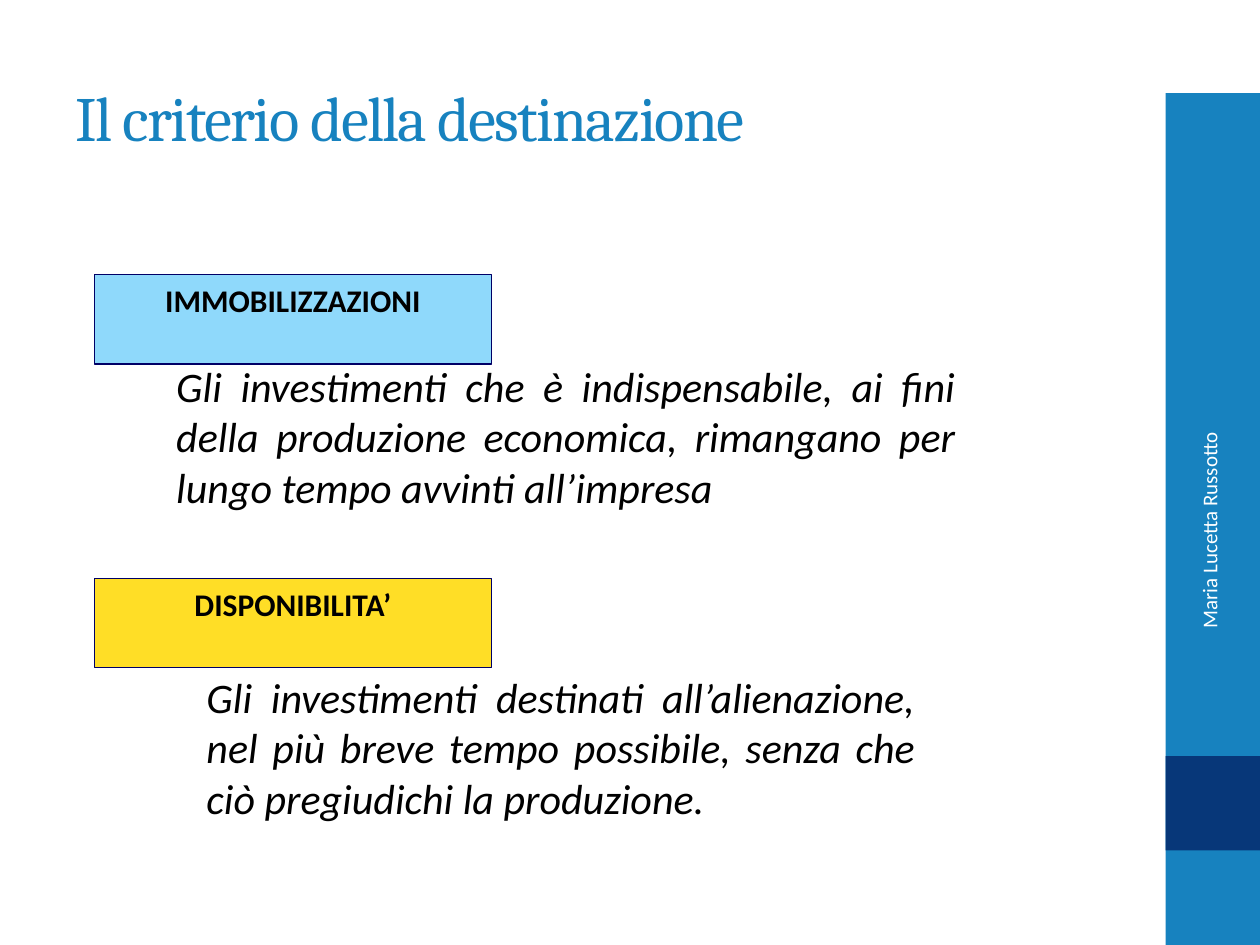
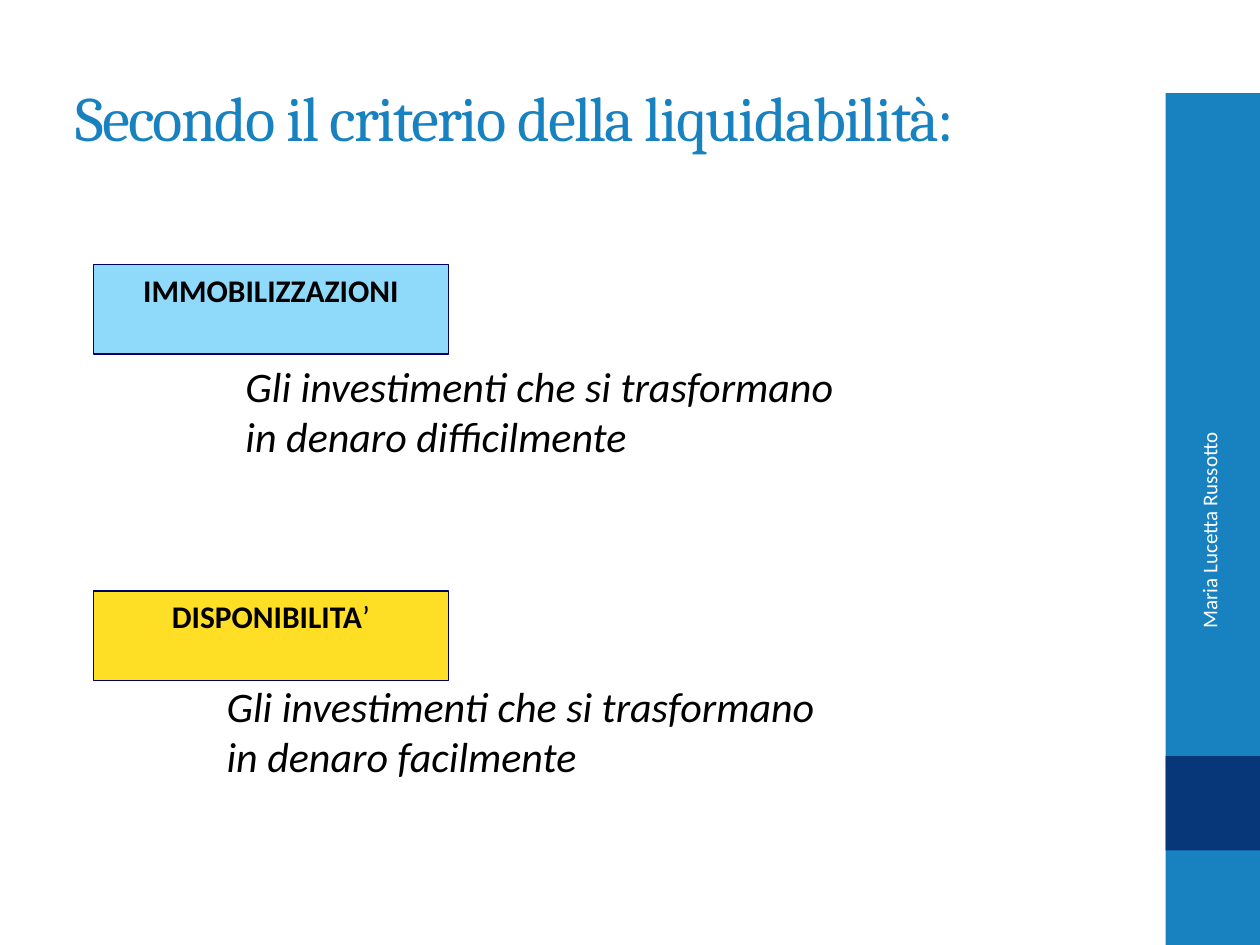
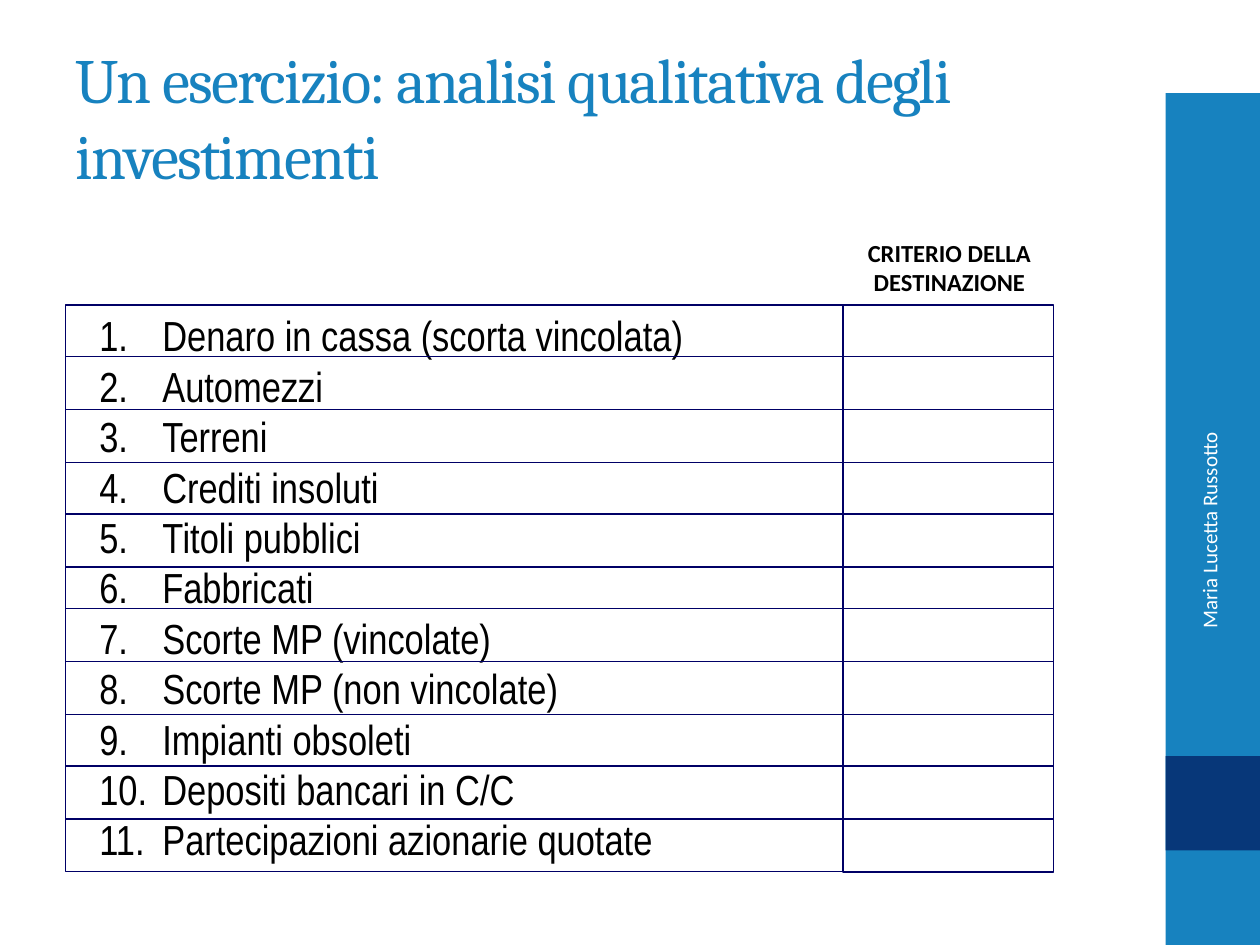
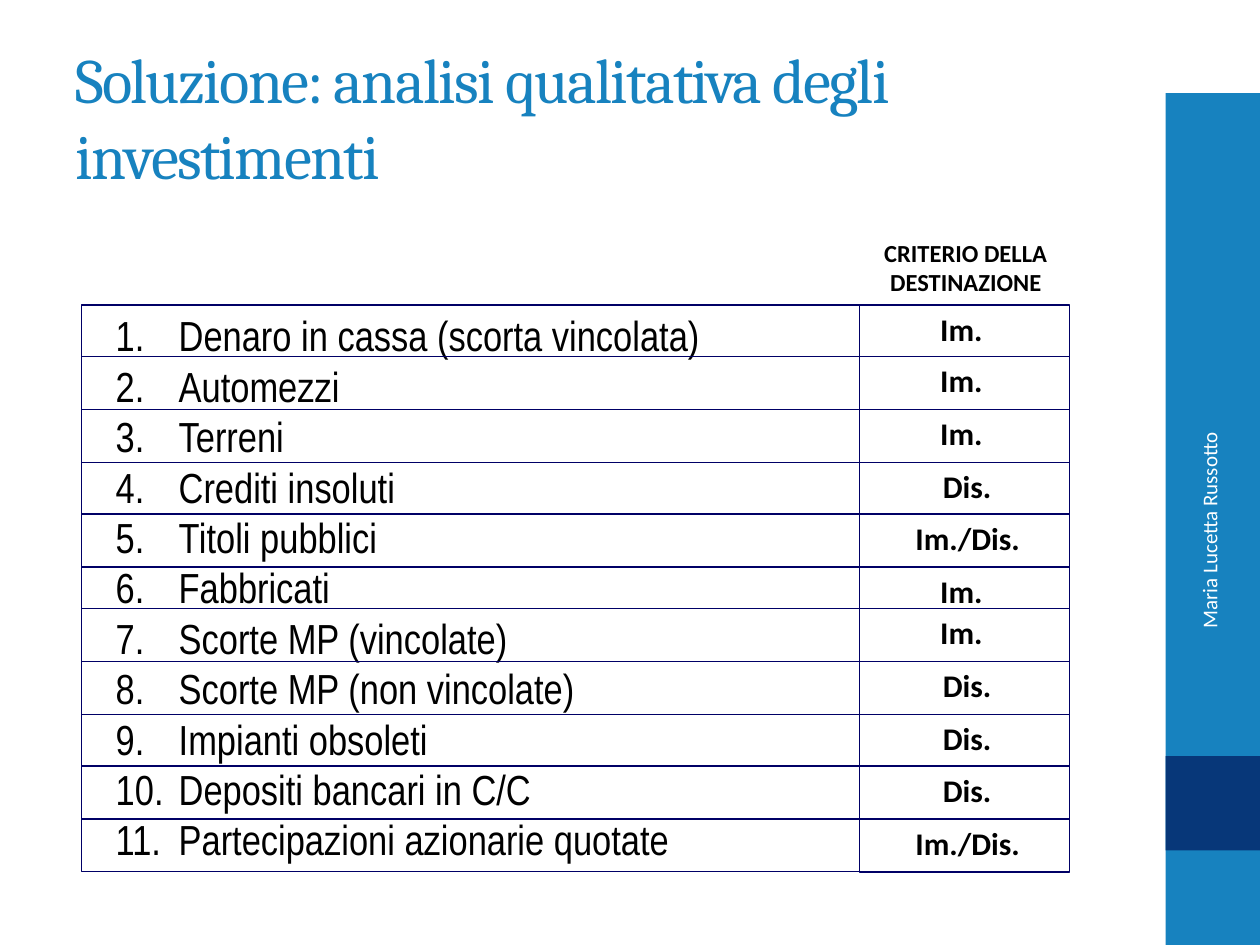
from itertools import accumulate

from lxml.etree import SubElement
from pptx import Presentation
from pptx.dml.color import RGBColor
from pptx.enum.shapes import MSO_CONNECTOR as Connector, MSO_SHAPE as Preset
from pptx.enum.text import MSO_ANCHOR as Anchor, MSO_AUTO_SIZE as AutoSize, PP_ALIGN as Align
from pptx.oxml.ns import qn
from pptx.util import Emu, Pt

SCALE = 9144
BLUE, NAVY, SKY, YELLOW = "1782BF", "073779", "8FD9FB", "FFDE26"
INK, BLACK, WHITE = "000066", "000000", "FFFFFF"
BODY, HEADING, NARROW = "Calibri", "Cambria", "Arial Narrow"

ROW_EDGES = [round(sixths / 6) for sixths in accumulate([1450] + [250] * 5 + [200] + [250] * 5)]
ITEMS_WIDTH, ANSWER_WIDTH = 617, 167
ITEMS = [
    "Denaro in cassa (scorta vincolata)",
    "Automezzi",
    "Terreni",
    "Crediti insoluti",
    "Titoli pubblici",
    "Fabbricati",
    "Scorte MP (vincolate)",
    "Scorte MP (non vincolate)",
    "Impianti obsoleti",
    "Depositi bancari in C/C",
    "Partecipazioni azionarie quotate",
]
FIXED, AVAILABLE, EITHER = "Im.", "Dis.", "Im./Dis."
ANSWERS = [FIXED, FIXED, FIXED, AVAILABLE, EITHER, FIXED, FIXED,
           AVAILABLE, AVAILABLE, AVAILABLE, EITHER]
ANSWER_SPANS = {FIXED: (671, 54), AVAILABLE: (673, 59), EITHER: (651, 104)}


def px(*lengths):
    return [Emu(length * SCALE) for length in lengths]


def color(hex_code):
    return RGBColor.from_string(hex_code)


def add_run(paragraph, words, size, font=BODY, ink=BLACK, bold=False, italic=False):
    run = paragraph.add_run()
    run.text = words
    run.font.size = Pt(size)
    run.font.name = font
    run.font.color.rgb = color(ink)
    run.font.bold = bold
    run.font.italic = italic
    return run


def add_text(slide, box, lines, size, align=Align.LEFT, wrap=True, anchor=Anchor.TOP, **style):
    text = slide.shapes.add_textbox(*px(*box))
    frame = text.text_frame
    frame.word_wrap = wrap
    frame.vertical_anchor = anchor
    if not wrap:
        frame.auto_size = AutoSize.SHAPE_TO_FIT_TEXT
    for index, words in enumerate(lines):
        paragraph = frame.add_paragraph() if index else frame.paragraphs[0]
        paragraph.alignment = align
        add_run(paragraph, words, size, **style)
    return text


def add_rect(slide, box, fill=None, outline=None):
    rect = slide.shapes.add_shape(Preset.RECTANGLE, *px(*box))
    rect.shadow.inherit = False
    if fill:
        rect.fill.solid()
        rect.fill.fore_color.rgb = color(fill)
    else:
        rect.fill.background()
    if outline:
        rect.line.color.rgb = color(outline)
        rect.line.width = Pt(0.75)
    else:
        rect.line.fill.background()
    return rect


def add_rule(slide, left, right, y):
    rule = slide.shapes.add_connector(Connector.STRAIGHT, *px(left, y, right, y))
    rule.line.color.rgb = color(INK)
    rule.line.width = Pt(0.75)
    SubElement(rule._element.spPr, qn("a:effectLst"))


def add_label(slide, box, fill, runs):
    label = add_rect(slide, box, fill, INK)
    frame = label.text_frame
    frame.vertical_anchor = Anchor.TOP
    paragraph = frame.paragraphs[0]
    paragraph.alignment = Align.CENTER
    for words, bold in runs:
        add_run(paragraph, words, 18, bold=bold)


def add_definition(slide, box, words, align):
    definition = add_text(slide, box, [words], 24, align, italic=True)
    definition.text_frame.margin_top = px(45)[0]


def number_paragraphs(frame):
    for paragraph in frame.paragraphs:
        properties = paragraph._p.get_or_add_pPr()
        indent = px(50)[0]
        properties.set("marL", str(indent))
        properties.set("indent", str(-indent))
        SubElement(properties, qn("a:buFont"), typeface="+mj-lt")
        SubElement(properties, qn("a:buAutoNum"), type="arabicPeriod")


def add_base_slide(deck, title):
    slide = deck.slides.add_slide(deck.slide_layouts[6])
    add_rect(slide, (925, 74, 75, 676), BLUE)
    add_rect(slide, (925, 600, 75, 75), NAVY)
    heading = add_text(slide, (50, 30, 833, 125), [title], 36, anchor=Anchor.MIDDLE,
                       font=HEADING, ink=BLUE)
    title_run = heading.text_frame.paragraphs[0].runs[0]
    title_run.font._element.set("spc", "-100")
    author = add_text(slide, (830, 443, 259, 40), ["Maria Lucetta Russotto"], 12,
                      Align.RIGHT, anchor=Anchor.MIDDLE, ink=WHITE)
    author.rotation = 270
    return slide


def add_criterion_slide(deck, title, entries, align):
    slide = add_base_slide(deck, title)
    for label_box, fill, runs, definition_box, words in entries:
        add_definition(slide, definition_box, words, align)
        add_label(slide, label_box, fill, runs)


def add_exercise_slide(deck, title, left, answers=()):
    slide = add_base_slide(deck, title)
    divider = left + ITEMS_WIDTH
    top, bottom = ROW_EDGES[0], ROW_EDGES[-1]
    items = add_text(slide, (left + 17, 241, 487, 454), ITEMS, 24, wrap=False, font=NARROW)
    number_paragraphs(items.text_frame)
    add_rect(slide, (left, top, ITEMS_WIDTH, bottom - top), outline=INK)
    for row_top, row_bottom in zip(ROW_EDGES, ROW_EDGES[1:]):
        add_rect(slide, (divider, row_top, ANSWER_WIDTH, row_bottom - row_top), outline=INK)
    for edge in ROW_EDGES[1:-1]:
        add_rule(slide, left, divider, edge)
    add_text(slide, (divider + 7, 184, 155, 57), ["CRITERIO DELLA", "DESTINAZIONE"], 14,
             Align.CENTER, wrap=False, bold=True)
    for row_top, answer in zip(ROW_EDGES, answers):
        offset, width = ANSWER_SPANS[answer]
        add_text(slide, (left + offset, row_top - 1, width, 40), [answer], 18,
                 Align.CENTER, wrap=False, bold=True)


def main():
    deck = Presentation()
    deck.slide_width, deck.slide_height = px(1000, 750)
    add_criterion_slide(deck, "Il criterio della destinazione", [
        ((75, 218, 315, 71), SKY, [("IMMOBILIZZAZIONI", True)], (130, 241, 638, 172),
         "Gli investimenti che è indispensabile, ai fini della produzione economica, "
         "rimangano per lungo tempo avvinti all’impresa"),
        ((75, 459, 315, 71), YELLOW, [("DISPONIBILITA’", True)], (154, 488, 582, 172),
         "Gli investimenti destinati all’alienazione, nel più breve tempo possibile, "
         "senza che ciò pregiudichi la produzione."),
    ], Align.JUSTIFY)
    add_criterion_slide(deck, "Secondo il criterio della liquidabilità:", [
        ((74, 210, 282, 71), SKY, [("IMMOBILIZZAZIONI", True)], (185, 241, 504, 131),
         "Gli investimenti che si trasformano in denaro difficilmente"),
        ((74, 469, 282, 71), YELLOW, [("DISPONIBILITA", True), ("’", False)],
         (170, 495, 511, 131),
         "Gli investimenti che si trasformano in denaro facilmente"),
    ], Align.LEFT)
    add_exercise_slide(deck, "Un esercizio: analisi qualitativa degli investimenti", 52)
    add_exercise_slide(deck, "Soluzione: analisi qualitativa degli investimenti", 65, ANSWERS)
    deck.save("out.pptx")


if __name__ == "__main__":
    main()
